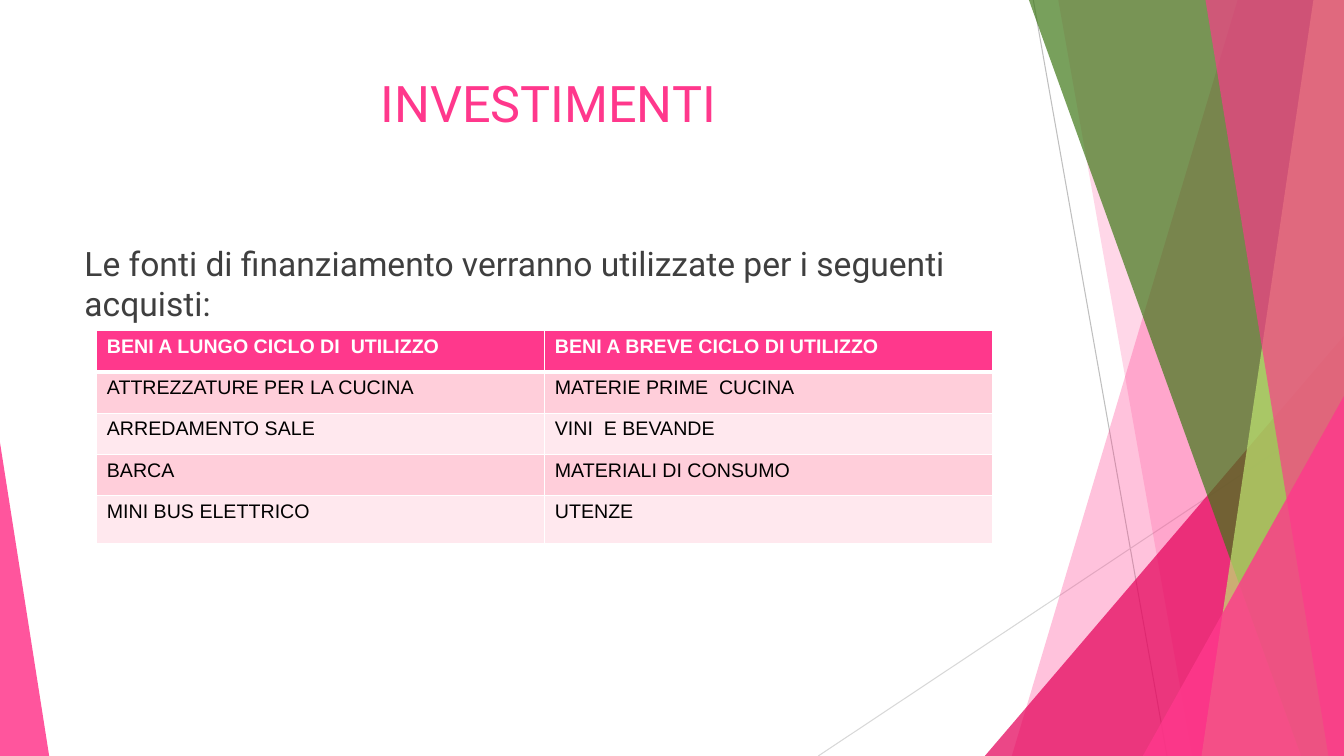
from pptx import Presentation
from pptx import util as u
from pptx.dml.color import RGBColor
from pptx.enum import shapes, text
from pptx.oxml import parse_xml
from pptx.oxml.ns import nsdecls, qn

WIDTH, HEIGHT = 33.87, 19.05
PINK, WHITE = "FF388C", "FFFFFF"
GOODS = [
    ("BENI A LUNGO CICLO DI  UTILIZZO", "BENI A BREVE CICLO DI UTILIZZO"),
    ("ATTREZZATURE PER LA CUCINA", "MATERIE PRIME  CUCINA"),
    ("ARREDAMENTO SALE", "VINI  E BEVANDE"),
    ("BARCA", "MATERIALI DI CONSUMO"),
    ("MINI BUS ELETTRICO", "UTENZE"),
]


def colour(value):
    return RGBColor.from_string(value)


def lengths(*values):
    return [u.Cm(value) for value in values]


def write(frame, words, align=text.PP_ALIGN.LEFT, **style):
    frame.word_wrap = True
    frame.vertical_anchor = text.MSO_ANCHOR.TOP
    para = frame.paragraphs[0]
    para.alignment = align
    span = para.add_run()
    span.text = words
    span.font.color.rgb = colour(style.pop("color"))
    for name, value in style.items():
        setattr(span.font, name, value)


def paint(shape, value, opacity):
    shape.shadow.inherit = False
    shape.line.fill.background()
    shape.fill.solid()
    shape.fill.fore_color.rgb = colour(value)
    tint = shape.fill._xPr.find(qn("a:solidFill"))[0]
    tint.append(parse_xml(f'<a:alpha {nsdecls("a")} val="{opacity * 1000}"/>'))


def add_ray(page, start, end, value):
    ray = page.shapes.add_connector(
        shapes.MSO_CONNECTOR.STRAIGHT, *lengths(*start, *end))
    ray.line.color.rgb = colour(value)
    ray.line.width = u.Pt(0.75)
    ray._element.spPr.append(parse_xml(f'<a:effectLst {nsdecls("a")}/>'))


def add_band(page, top, bottom, value, opacity):
    outline = page.shapes.build_freeform(*lengths(top, 0))
    corners = [(WIDTH, 0), (WIDTH, HEIGHT), (bottom, HEIGHT)]
    outline.add_line_segments([lengths(*corner) for corner in corners])
    paint(outline.convert_to_shape(), value, opacity)


def add_corner(page, left, top, width, apex, value, opacity):
    corner = page.shapes.add_shape(
        shapes.MSO_SHAPE.ISOSCELES_TRIANGLE,
        *lengths(left, top, width, HEIGHT - top))
    corner.adjustments[0] = apex
    paint(corner, value, opacity)


def add_facets(page):
    add_ray(page, (26.04, 0), (29.41, HEIGHT), "BFBFBF")
    add_ray(page, (WIDTH, 10.24), (20.62, HEIGHT), "D8D8D8")
    add_band(page, 31.19, 25.5, PINK, 30)
    add_band(page, 26.67, 30.05, PINK, 20)
    add_corner(page, 24.82, 8.46, WIDTH - 24.82, 1, "E40059", 72)
    add_band(page, 25.93, 32.79, "3F7818", 70)
    add_band(page, 33.1, 30.28, "BFE471", 70)
    add_band(page, 30.38, 33.48, PINK, 65)
    add_corner(page, 28.8, 9.98, WIDTH - 28.8, 1, PINK, 80)
    add_corner(page, 0, 11.15, 1.24, 0, PINK, 85)


def add_title(page, left, top, width, height):
    title = page.shapes.title
    place = dict(zip(("left", "top", "width", "height"),
                     lengths(left, top, width, height)))
    for name, value in place.items():
        setattr(title, name, value)
    write(title.text_frame, "INVESTIMENTI", text.PP_ALIGN.CENTER,
          name="Roboto", size=u.Pt(36), color=PINK)


def add_intro(page, left, top, width, height):
    box = page.shapes.add_textbox(*lengths(left, top, width, height))
    write(box.text_frame,
          "Le fonti di finanziamento verranno utilizzate per i seguenti acquisti:",
          name="Roboto", size=u.Pt(24), color="3F3F3F")


def add_borders(cell, widths):
    properties = cell._tc.get_or_add_tcPr()
    for index, (side, points) in enumerate(widths.items()):
        properties.insert(index, parse_xml(
            f'<a:ln{side} {nsdecls("a")} w="{u.Pt(points)}"><a:solidFill>'
            f'<a:srgbClr val="{WHITE}"/></a:solidFill></a:ln{side}>'))


def add_goods(page, left, top, width, row_height, last_height):
    heights = [row_height] * (len(GOODS) - 1) + [last_height]
    grid = page.shapes.add_table(
        len(GOODS), 2, *lengths(left, top, width, sum(heights))).table
    for row, (words, height) in enumerate(zip(GOODS, heights)):
        grid.rows[row].height = u.Cm(height)
        header = row == 0
        fill = PINK if header else ("FFE8EE", "FFCEDA")[row % 2]
        for column, label in enumerate(words):
            cell = grid.cell(row, column)
            cell.fill.solid()
            cell.fill.fore_color.rgb = colour(fill)
            add_borders(cell, {"L": 1, "R": 1, "T": 3 if row == 1 else 1,
                               "B": 3 if header else 1})
            write(cell.text_frame, label, name="Arial", size=u.Pt(14),
                  bold=header, color=WHITE if header else "000000")


def main():
    deck = Presentation()
    deck.slide_width, deck.slide_height = lengths(WIDTH, HEIGHT)
    page = deck.slides.add_slide(deck.slide_layouts[5])
    add_facets(page)
    add_title(page, 1.88, 1.7, 23.88, 3.66)
    add_intro(page, 1.88, 5.99, 23.88, 10.77)
    add_goods(page, 2.44, 8.33, 22.58, 1.04, 1.22)
    deck.save("out.pptx")


if __name__ == "__main__":
    main()
